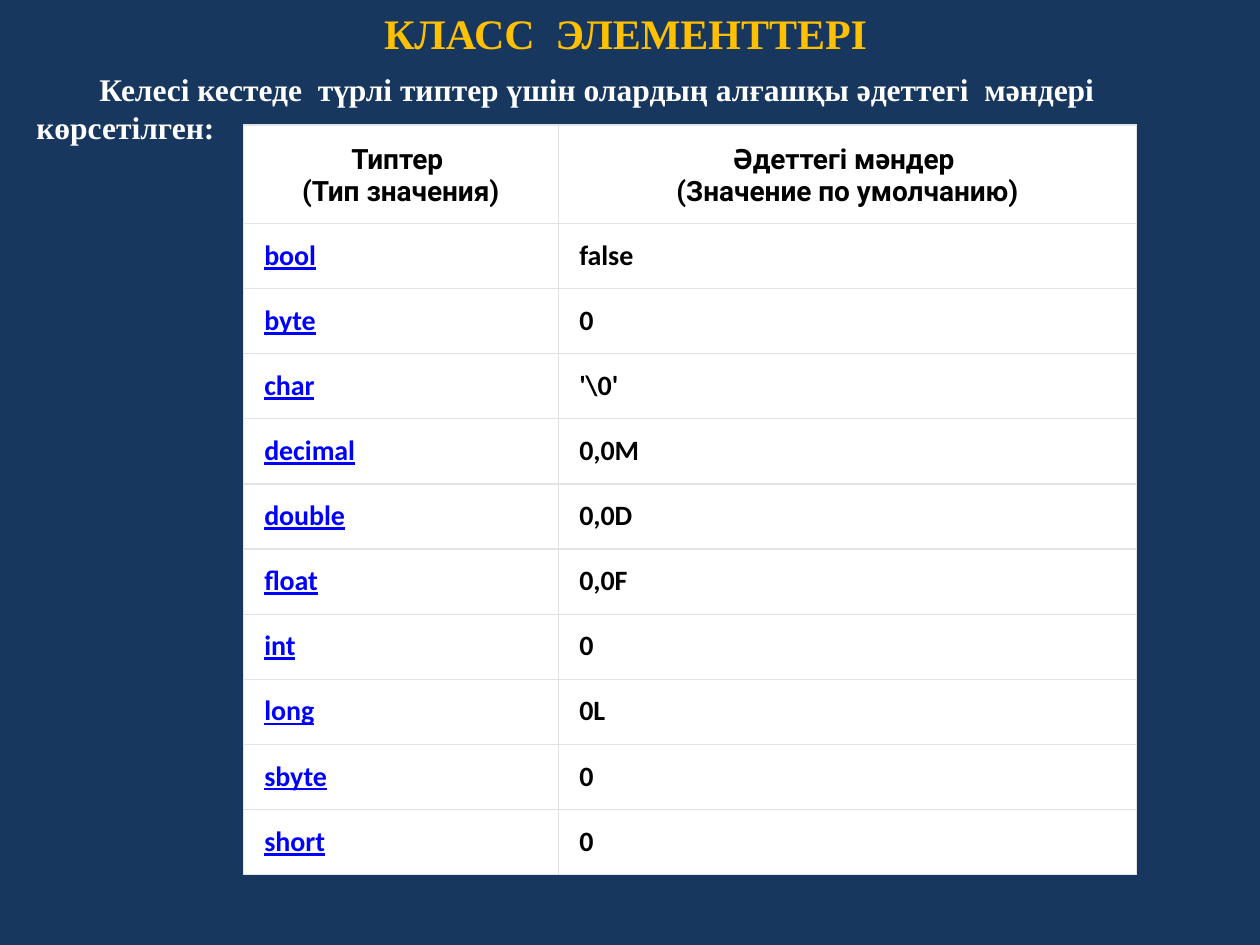
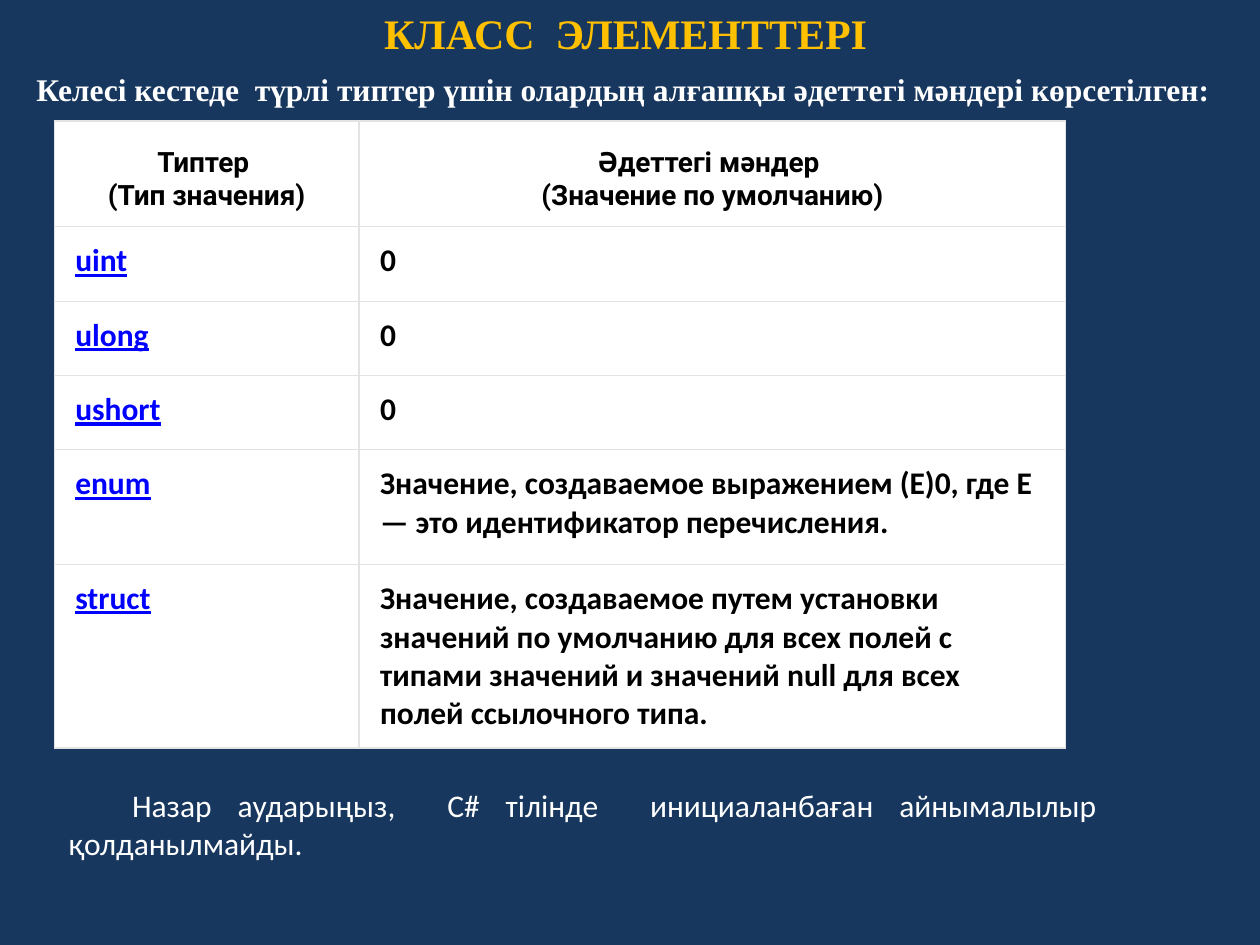
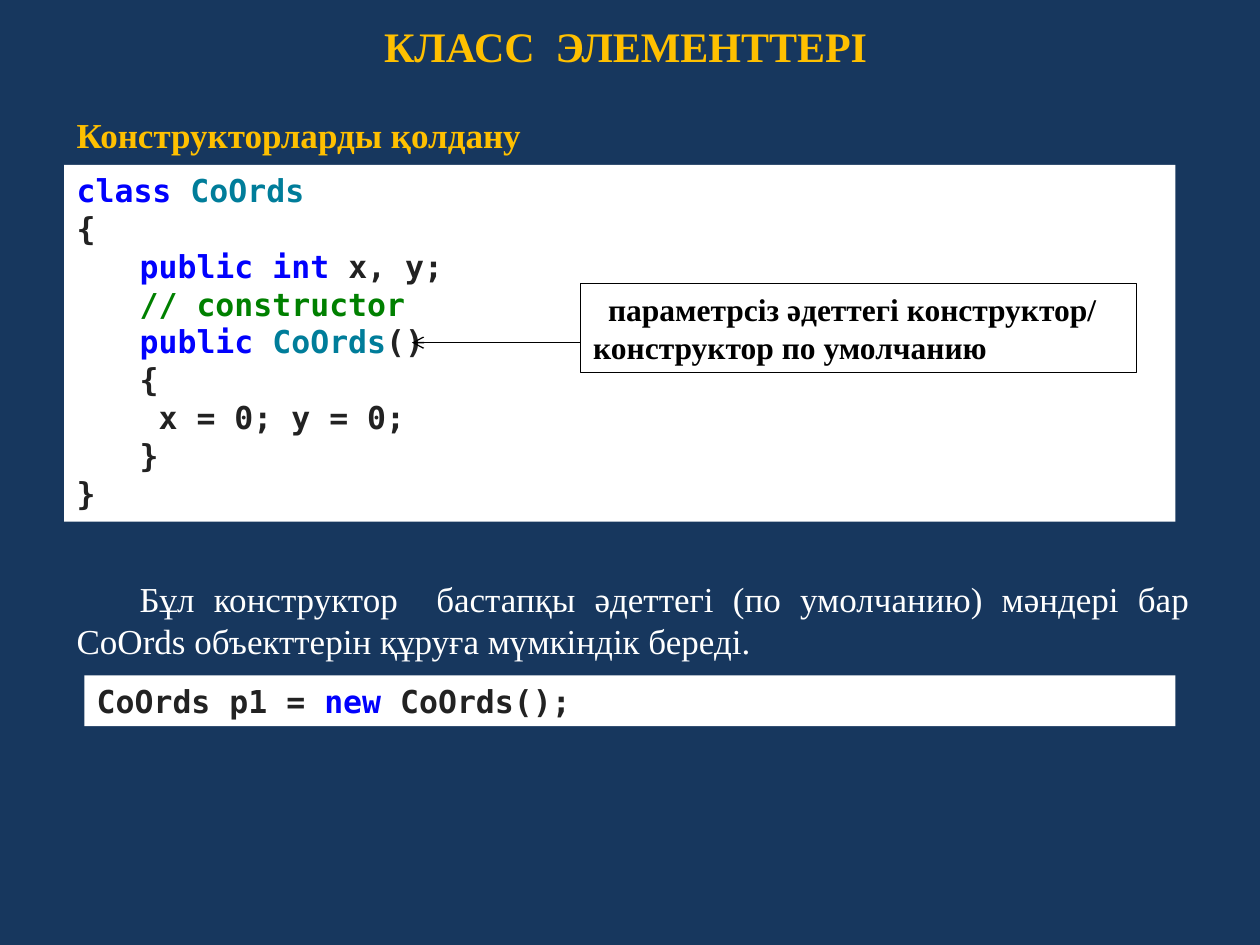
from dataclasses import dataclass
from lxml.etree import SubElement as Sub
from pptx import Presentation
from pptx.dml.color import RGBColor as RGB
from pptx.enum.shapes import MSO_CONNECTOR as Conn, MSO_SHAPE as Form
from pptx.enum.text import MSO_ANCHOR as Anchor, MSO_AUTO_SIZE as Auto, PP_ALIGN as Align
from pptx.oxml.ns import qn
from pptx.util import Pt


@dataclass(frozen=True)
class Theme:
    back: str = "17375E"
    gold: str = "FFC000"
    white: str = "FFFFFF"
    black: str = "000000"
    link: str = "0000FF"
    rule: str = "E3E3E3"
    key: str = "0101FD"
    kind: str = "007D9A"
    note: str = "008000"
    code: str = "222222"
    serif: str = "Times New Roman"
    sans: str = "Calibri"
    mono: str = "DejaVu Sans Mono"
    head: str = "Roboto"
    title: int = 24
    large: int = 20
    body: int = 18
    small: int = 16


T = Theme()
INDENT = 36
TITLE = "КЛАСС  ЭЛЕМЕНТТЕРІ"
HEADS = (("Типтер ", "(Тип значения)"),
         ("Әдеттегі мәндер ", "(Значение по умолчанию)"))
BASIC = (("bool", "false"), ("byte", "0"), ("char", "'\\0'"), ("decimal", "0,0M"),
         ("double", "0,0D"), ("float", "0,0F"), ("int", "0"), ("long", "0L"),
         ("sbyte", "0"), ("short", "0"))
OTHER = (("uint", "0"), ("ulong", "0"), ("ushort", "0"),
         ("enum", "Значение, создаваемое выражением (E)0, где E — это идентификатор перечисления."),
         ("struct", "Значение, создаваемое путем установки значений по умолчанию для всех полей "
                    "с типами значений и значений null для всех полей ссылочного типа."))
# Each code line is an indent followed by its coloured runs
CLASS = ((0, ("class ", T.key), ("CoOrds", T.kind)),
         (0, ("{", T.code)),
         (INDENT, ("public int", T.key), (" x, y;", T.code)),
         (INDENT, ("// constructor", T.note)),
         (INDENT, ("public ", T.key), ("CoOrds", T.kind), ("()", T.code)),
         (INDENT, ("{", T.code)),
         (INDENT, (" x = 0; y = 0;", T.code)),
         (INDENT, ("}", T.code)),
         (0, ("}", T.code)))
CALL = ((0, ("CoOrds p1 = ", T.code), ("new ", T.key), ("CoOrds();", T.code)),)


def write(frame, lines, face, size, bold=True, align=Align.LEFT, under=False):
    """Fill a frame with lines, each an indent and (text, colour) runs."""
    for i, (indent, *runs) in enumerate(lines):
        para = frame.add_paragraph() if i else frame.paragraphs[0]
        para.alignment = align
        if indent:
            props = para._p.get_or_add_pPr()
            props.set("marL", "0")
            props.set("indent", str(Pt(indent)))
        for text, tint in runs:
            run = para.add_run()
            run.text = text
            font = run.font
            font.name, font.size, font.bold = face, Pt(size), bold
            font.underline = under
            font.color.rgb = RGB.from_string(tint)


def place(slide, box, lines, face, size, wrap=True, **style):
    """Plain text box."""
    frame = slide.shapes.add_textbox(*map(Pt, box)).text_frame
    frame.word_wrap = wrap
    frame.auto_size = Auto.SHAPE_TO_FIT_TEXT
    write(frame, lines, face, size, **style)


def panel(slide, box, lines, face, fill=None, line=None):
    """Rectangle holding left-aligned text."""
    shape = slide.shapes.add_shape(Form.RECTANGLE, *map(Pt, box))
    shape.shadow.inherit = False
    if fill:
        shape.fill.solid()
        shape.fill.fore_color.rgb = RGB.from_string(fill)
    else:
        shape.fill.background()
    if line:
        shape.line.color.rgb = RGB.from_string(line)
        shape.line.width = Pt(0.75)
    else:
        shape.line.fill.background()
    frame = shape.text_frame
    frame.word_wrap = True
    frame.vertical_anchor = Anchor.TOP
    write(frame, lines, face, T.body)


def title(slide, top):
    place(slide, (212.4, top, 299.5, 36), [(0, (TITLE, T.gold))], T.serif, T.title, wrap=False)


def intro(slide, width, text, indent=0):
    place(slide, (13.7, 36.7, width, 29), [(indent, (text, T.white))], T.serif, T.body)


def edge(cell, sides):
    """Draw cell borders; sides maps L, R, T, B to a width."""
    props = cell._tc.get_or_add_tcPr()
    for side, width in sides.items():
        line = Sub(props, qn(f"a:ln{side}"), w=str(Pt(width)))
        Sub(Sub(line, qn("a:solidFill")), qn("a:srgbClr"), val=T.rule)


def grid(slide, box, cols, highs, rows, size):
    """Table of value types and their defaults."""
    table = slide.shapes.add_table(len(highs), len(cols), *map(Pt, box)).table
    table.first_row = table.horz_banding = False
    for col, width in zip(table.columns, cols):
        col.width = Pt(width)
    for row, high in zip(table.rows, highs):
        row.height = Pt(high)
    last = len(rows)
    for r, texts in enumerate((HEADS, *rows)):
        for c, text in enumerate(texts):
            cell = table.cell(r, c)
            cell.margin_left = cell.margin_right = Pt(12)
            cell.margin_top = cell.margin_bottom = Pt(8.64)
            edge(cell, {"L": 1, "R": 1, "T": 0.75 if r else 1, "B": 0.75 if r < last else 1})
            cell.fill.solid()
            cell.fill.fore_color.rgb = RGB.from_string(T.white)
            if r == 0:
                cell.vertical_anchor = Anchor.BOTTOM
                write(cell.text_frame, [(0, (part, T.black)) for part in text],
                      T.head, T.small, align=Align.CENTER)
            else:
                tint = T.black if c else T.link
                write(cell.text_frame, [(0, (text, tint))], T.sans, size, under=c == 0)


def arrow(slide, start, end):
    line = slide.shapes.add_connector(Conn.STRAIGHT, *map(Pt, (*start, *end)))
    line.line.color.rgb = RGB.from_string(T.black)
    line.line.width = Pt(0.75)
    Sub(line.line._get_or_add_ln(), qn("a:tailEnd"), type="arrow")
    Sub(line._element.spPr, qn("a:effectLst"))


def basics(slide):
    """Defaults of the basic types."""
    grid(slide, (139, 71.3, 510.5, 428.5), (180, 330.5), (56.5, *[37.2] * len(BASIC)),
         BASIC, T.small)
    intro(slide, 663.8, "Келесі кестеде  түрлі типтер үшін олардың алғашқы әдеттегі  мәндері "
          "көрсетілген:", INDENT)
    title(slide, 0.7)


def others(slide):
    """Defaults of the other types, with a closing remark."""
    text = "Назар аударыңыз,  C# тілінде  инициаланбаған айнымалылыр  қолданылмайды."
    place(slide, (32.4, 445.7, 616.3, 51), [(INDENT, (text, T.white))], T.sans, T.body,
          bold=False, align=Align.JUSTIFY)
    grid(slide, (31, 69.1, 578, 358.5), (174.2, 403.8), (60.5, *[42.5] * 3, 65.5, 105),
         OTHER, T.body)
    intro(slide, 697.7, "Келесі кестеде  түрлі типтер үшін олардың алғашқы әдеттегі мәндері "
          "көрсетілген:")
    title(slide, 0.7)


def maker(slide):
    """Class code with its constructor marked, then a call."""
    left = 36.7
    panel(slide, (left, 94.3, 635, 203.8), CLASS, T.mono, fill=T.white)
    title(slide, 7.9)
    # Callout and its arrow
    x, y = 331.9, 162
    text = "параметрсіз әдеттегі конструктор/ конструктор по умолчанию"
    panel(slide, (x, y, 317.5, 51), [(8.5, (text, T.black))], T.serif, line=T.black)
    arrow(slide, (x, y + 33.8), (x - 96.5, y + 33.8))
    # Heading, remark and call
    place(slide, (left, 61.2, 273.6, 31.7), [(0, ("Конструкторларды қолдану", T.gold))],
          T.serif, T.large, wrap=False)
    text = ("Бұл конструктор  бастапқы әдеттегі (по умолчанию) мәндері бар CoOrds "
            "объекттерін құруға мүмкіндік береді.")
    place(slide, (left, 326.2, 650.2, 55.4), [(INDENT, (text, T.white))], T.serif, T.large,
          bold=False, align=Align.JUSTIFY)
    panel(slide, (48.2, 385.9, 623.5, 29), CALL, T.mono, fill=T.white)


def main():
    deck = Presentation()
    deck.slide_width, deck.slide_height = Pt(720), Pt(540)
    fill = deck.slide_master.background.fill
    fill.solid()
    fill.fore_color.rgb = RGB.from_string(T.back)
    for build in (basics, others, maker):
        build(deck.slides.add_slide(deck.slide_layouts[6]))
    deck.save("out.pptx")


if __name__ == "__main__":
    main()
